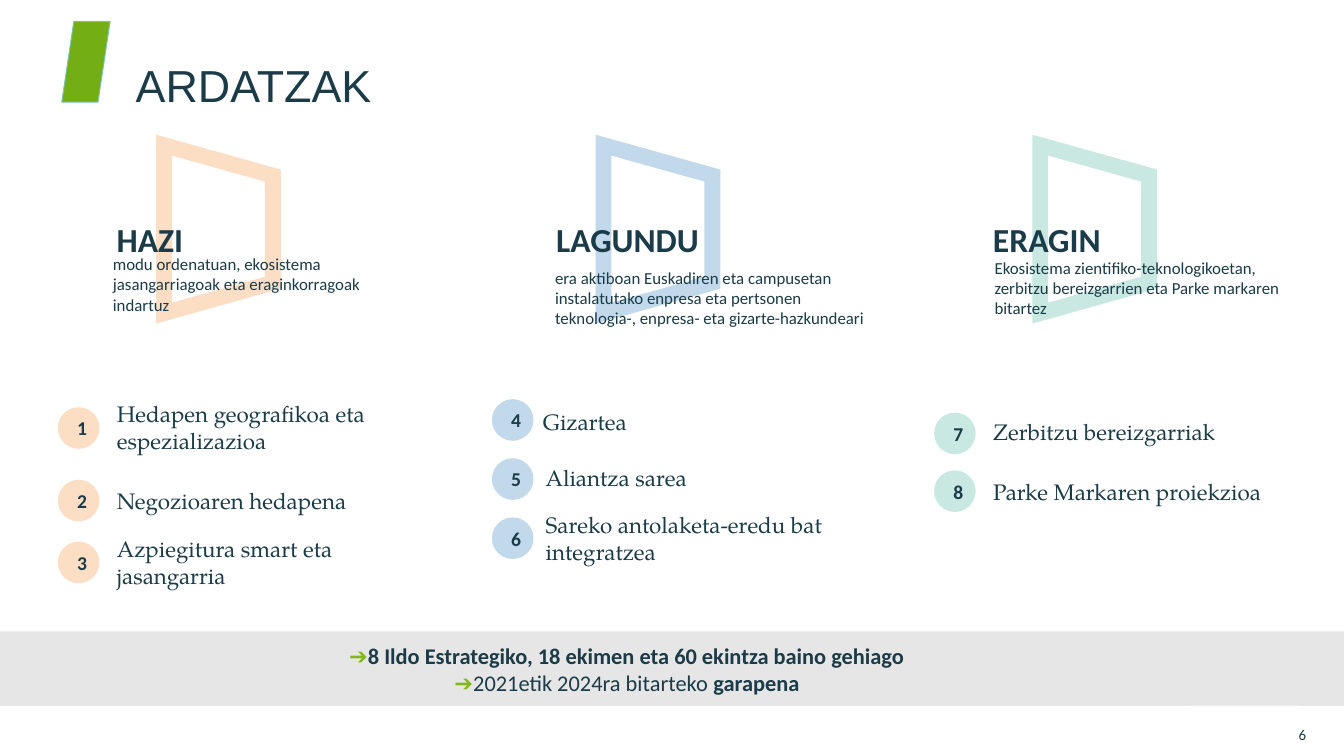
from dataclasses import dataclass

from lxml.etree import SubElement
from pptx import Presentation
from pptx.dml.color import RGBColor
from pptx.enum.shapes import MSO_SHAPE as SHAPE
from pptx.enum.text import MSO_ANCHOR as ANCHOR, MSO_AUTO_SIZE as AUTO, PP_ALIGN as ALIGN
from pptx.oxml.ns import qn
from pptx.util import Inches, Pt

COLORS = {
    "ink": "1A3B47", "orange": "FCDEC5", "blue": "C1D9EA", "mint": "C9E8E1",
    "band": "E7E6E6", "arrow": "84B818", "green": "73AF14", "edge": "79C5B3",
}
SERIF = "TeX Gyre Pagella"
DOT = 0.31
Box = tuple[float, float, float, float]


@dataclass
class Run:
    text: str
    font: str = "Calibri"
    size: float = 12
    color: str = "ink"
    bold: bool = False


@dataclass
class Item:
    number: int
    dot_top: float
    label: str
    box: Box


@dataclass
class Axis:
    name: str
    color: str
    frame_left: float
    description: str
    desc_box: Box
    dot_left: float
    items: list[Item]


AXES = [
    Axis("HAZI", "orange", 1,
         "modu ordenatuan, ekosistema jasangarriagoak eta eraginkorragoak indartuz",
         (0.81, 1.71, 2.12, 0.81), 0.43, [
             Item(1, 3.03, "Hedapen geografikoa eta espezializazioa", (0.81, 2.98, 2.55, 0.4)),
             Item(2, 3.57, "Negozioaren hedapena", (0.81, 3.54, 2.7, 0.37)),
             Item(3, 4.03, "Azpiegitura smart eta jasangarria", (0.81, 4.05, 2.55, 0.27)),
         ]),
    Axis("LAGUNDU", "blue", 4.27,
         "era aktiboan Euskadiren eta campusetan instalatutako enpresa eta pertsonen "
         "teknologia-, enpresa- eta gizarte-hazkundeari",
         (4.1, 1.77, 2.45, 0.89), 3.66, [
             Item(4, 2.97, "Gizartea", (3.98, 3.04, 1.39, 0.19)),
             Item(5, 3.41, "Aliantza sarea", (4, 3.46, 1.39, 0.19)),
             Item(6, 3.85, "Sareko antolaketa-eredu bat integratzea", (4, 3.91, 2.42, 0.19)),
         ]),
    Axis("ERAGIN", "mint", 7.52,
         "Ekosistema zientifiko-teknologikoetan, zerbitzu bereizgarrien eta Parke markaren bitartez",
         (7.37, 1.69, 2.35, 0.9), 6.95, [
             Item(7, 3.07, "Zerbitzu bereizgarriak", (7.33, 3.05, 2.01, 0.33)),
             Item(8, 3.5, "Parke Markaren proiekzioa", (7.33, 3.56, 2.42, 0.2)),
         ]),
]


def rgb(name: str) -> RGBColor:
    return RGBColor.from_string(COLORS[name])


def place(box: Box) -> list[int]:
    return [Inches(v) for v in box]


def write(sp, *paragraphs: list[Run], align=ALIGN.LEFT, anchor=ANCHOR.MIDDLE,
          insets: Box = (0.1, 0.05, 0.1, 0.05), auto=AUTO.NONE) -> None:
    """Fill a shape with paragraphs of formatted runs."""
    tf = sp.text_frame
    tf.word_wrap, tf.auto_size, tf.vertical_anchor = True, auto, anchor
    tf.margin_left, tf.margin_top, tf.margin_right, tf.margin_bottom = place(insets)
    for i, runs in enumerate(paragraphs):
        p = tf.add_paragraph() if i else tf.paragraphs[0]
        p.alignment = align
        for run in runs:
            r = p.add_run()
            r.text = run.text
            r.font.name, r.font.size, r.font.bold = run.font, Pt(run.size), run.bold
            r.font.color.rgb = rgb(run.color)


def paint(sp, fill: str | None = None, line: str | None = None, width: float = 0.5) -> None:
    sp.shadow.inherit = False
    if fill:
        sp.fill.solid()
        sp.fill.fore_color.rgb = rgb(fill)
    else:
        sp.fill.background()
    if line:
        sp.line.color.rgb = rgb(line)
        sp.line.width = Pt(width)
    else:
        sp.line.fill.background()


def draw_axis(s, axis: Axis) -> None:
    # Tilted frame with its heading
    group = s.shapes.add_group_shape()
    frame = group.shapes.add_shape(SHAPE.TRAPEZOID, *place((axis.frame_left, 1.3, 1.25, 0.81)))
    frame.adjustments[0] = 0.28
    frame.rotation = 90
    paint(frame, line=axis.color, width=8.5)
    SubElement(frame.line._get_or_add_ln(), qn("a:miter"), lim="800000")
    heading = group.shapes.add_textbox(*place((axis.frame_left - 0.23, 1.58, 2.06, 0.4)))
    write(heading, [Run(axis.name, size=18, bold=True)], anchor=ANCHOR.TOP,
          auto=AUTO.SHAPE_TO_FIT_TEXT)

    # Description
    sp = s.shapes.add_textbox(*place(axis.desc_box))
    write(sp, [Run(axis.description, size=9)], insets=(0.03,) * 4)

    # Numbered lines
    for item in axis.items:
        dot = s.shapes.add_shape(SHAPE.OVAL, *place((axis.dot_left, item.dot_top, DOT, DOT)))
        paint(dot, fill=axis.color)
        write(dot, [Run(str(item.number), size=10.5, bold=True)], align=ALIGN.CENTER)
        label = s.shapes.add_textbox(*place(item.box))
        write(label, [Run(item.label, font=SERIF)], insets=(0.06, 0.03, 0.06, 0.03))


def draw_band(s) -> None:
    base = s.shapes.add_shape(SHAPE.RECTANGLE, *place((0, 4.7, 10, 0.55)))
    paint(base, fill="band")
    outline = [(10, 4.7), (10, 5.25), (9.66, 5.25), (9.66, 5.02), (8.85, 5.25), (0, 5.25)]
    builder = s.shapes.build_freeform(Inches(0), Inches(4.7))
    builder.add_line_segments([(Inches(x), Inches(y)) for x, y in outline])
    summary = builder.convert_to_shape()
    paint(summary, fill="band")
    arrow = Run("➔", font="Arial", color="arrow", bold=True)
    write(summary,
          [arrow, Run("8 Ildo Estrategiko, 18 ekimen eta 60 ekintza baino gehiago", bold=True)],
          [arrow, Run("2021etik 2024ra bitarteko "), Run("garapena", bold=True)],
          align=ALIGN.CENTER, insets=(0.79, 0.05, 1.46, 0.05))


def main() -> None:
    # Widescreen page, 16:9
    prs = Presentation()
    prs.slide_width = Inches(10)
    prs.slide_height = prs.slide_width * 9 // 16
    s = prs.slides.add_slide(prs.slide_layouts[5])

    # Title and its marker
    title = s.shapes.title
    title.left, title.top, title.width, title.height = place((0.91, 0.38, 2.44, 0.5))
    write(title, [Run("ARDATZAK", font="Arial", size=24)], anchor=ANCHOR.TOP)
    marker = s.shapes.add_shape(SHAPE.PARALLELOGRAM, *place((0.46, 0.16, 0.36, 0.6)))
    paint(marker, fill="green", line="edge")

    # Strategic axes, summary and page number
    for axis in AXES:
        draw_axis(s, axis)
    draw_band(s)
    number = s.shapes.add_textbox(*place((9.41, 5.33, 0.31, 0.27)))
    write(number, [Run("6", size=8)], align=ALIGN.RIGHT, insets=(0,) * 4)

    prs.save("out.pptx")


if __name__ == "__main__":
    main()
